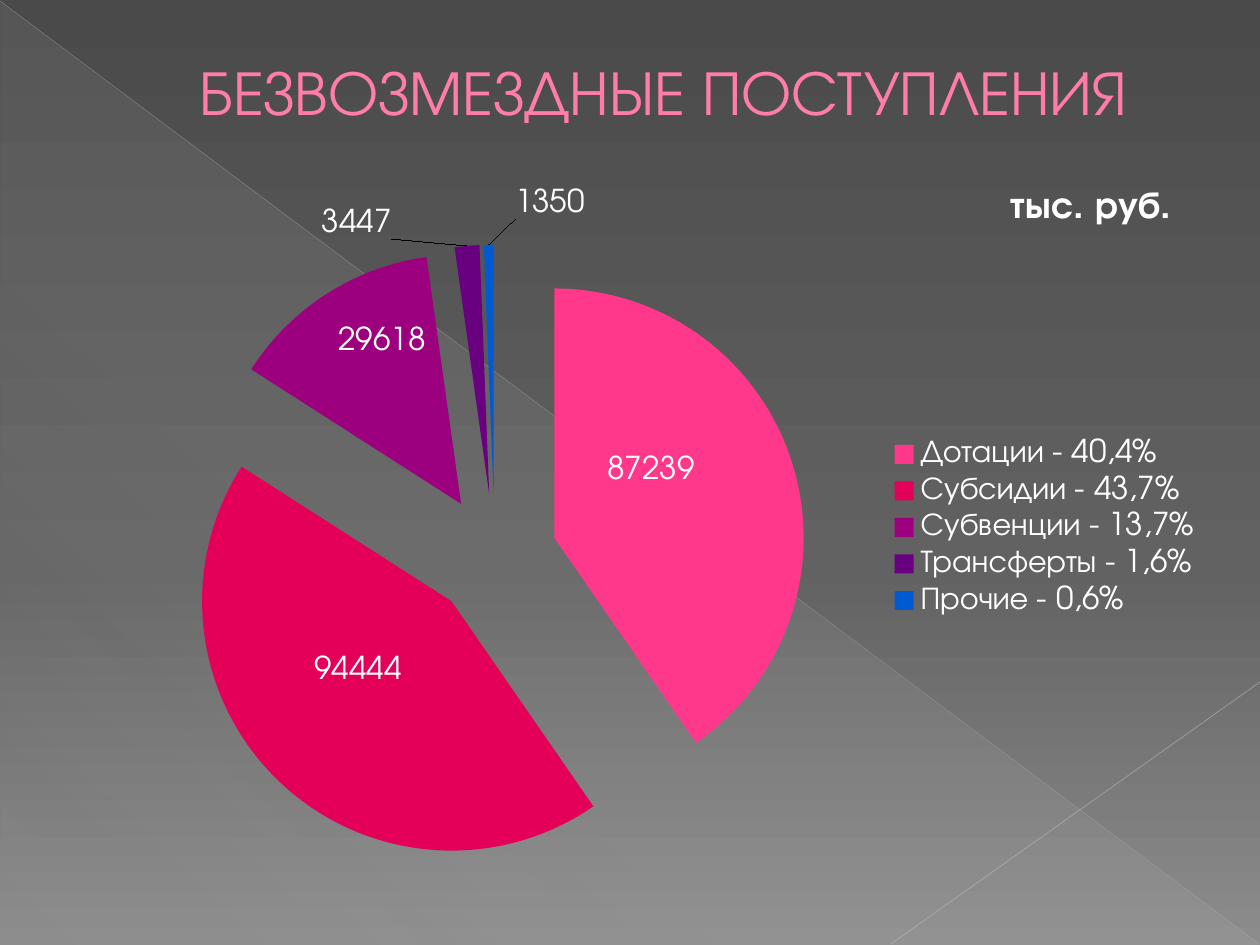
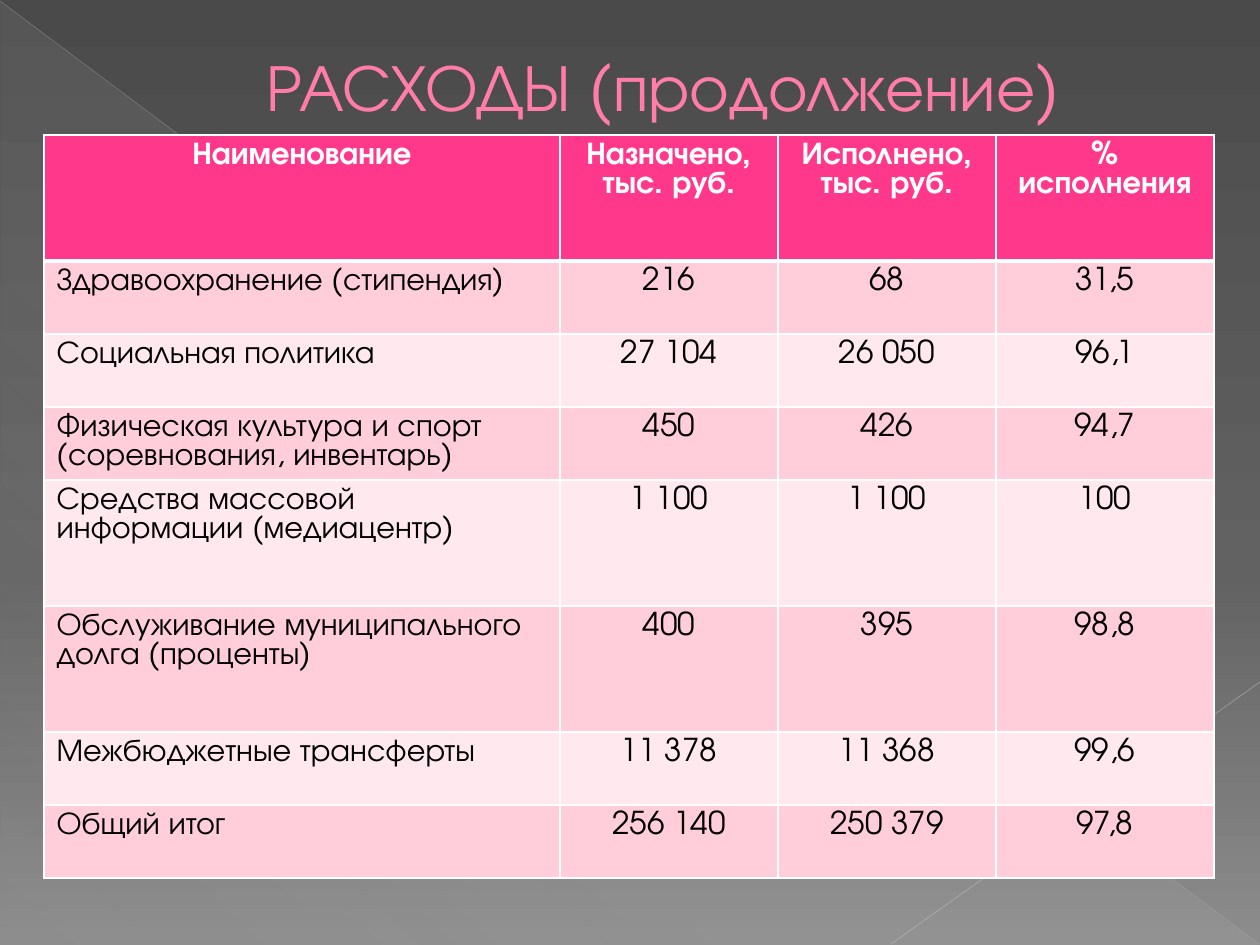
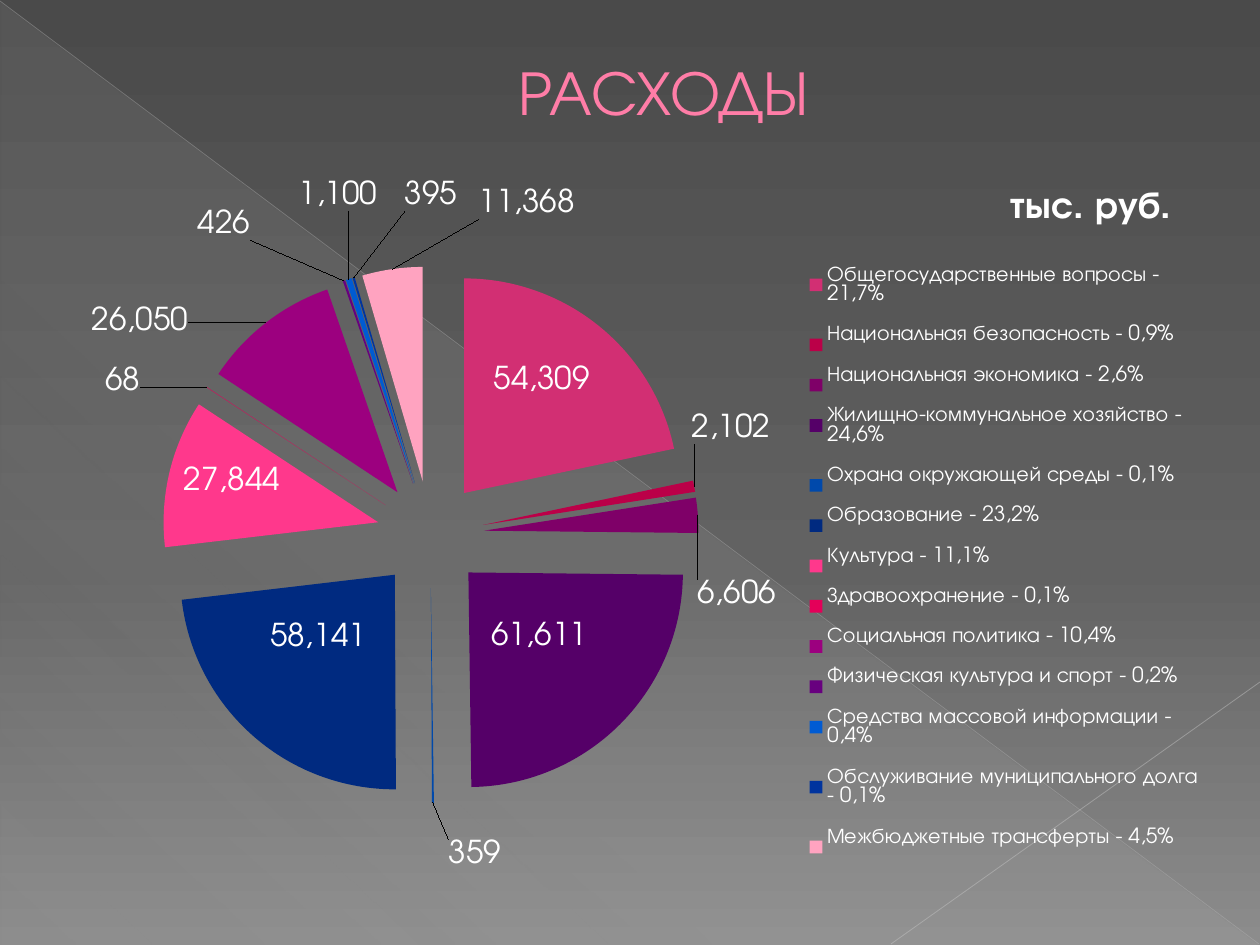
from math import cos, pi, sin

from lxml import etree
from pptx import Presentation
from pptx.chart.data import CategoryChartData
from pptx.dml.color import RGBColor
from pptx.enum.chart import XL_CHART_TYPE, XL_LABEL_POSITION, XL_LEGEND_POSITION
from pptx.enum.shapes import MSO_CONNECTOR, MSO_SHAPE
from pptx.enum.text import MSO_ANCHOR, MSO_AUTO_SIZE, PP_ALIGN
from pptx.oxml.ns import qn
from pptx.util import Emu, Pt

PIE = XL_CHART_TYPE.PIE
CENTER_LABEL = XL_LABEL_POSITION.CENTER
RIGHT_LEGEND = XL_LEGEND_POSITION.RIGHT
STRAIGHT = MSO_CONNECTOR.STRAIGHT
TRIANGLE = MSO_SHAPE.RIGHT_TRIANGLE
MIDDLE = MSO_ANCHOR.MIDDLE
NO_FIT = MSO_AUTO_SIZE.NONE
LEFT, CENTER = PP_ALIGN.LEFT, PP_ALIGN.CENTER

SCALE = 914400 / 126
FACE = "TeX Gyre Adventor"
WHITE, BLACK = "FFFFFF", "000000"
ROSE, RIM = "FF7DA7", "B12761"
HEAD = "FF388C"
BANDS = ("FFCEDA", "FFE8EE")
HUES = ["FF388C", "E40059", "9C007F", "68007F", "005BD3", "00349E"]
DARK = ["D22F73", "BB0048", "7F0068", "550068", "0049AB", "002A80"]
PALE = "FFA3C0"
EXPLODE = 25
DROP = 3  # digits sit this much above the middle of their label
FRAME = (44, 165, 1171, 725)
UNIT = "тыс. руб."

GRANTS = [  # name, value, centre of the label
    ("Дотации - 40,4%", 87239, (651, 468)),
    ("Субсидии - 43,7%", 94444, (358, 668)),
    ("Субвенции - 13,7%", 29618, (382, 339)),
    ("Трансферты - 1,6%", 3447, (357, 221)),
    ("Прочие - 0,6%", 1350, (550, 201)),
]
COSTS = [
    ("Общегосударственные вопросы - 21,7%", 54309, (542, 378)),
    ("Национальная безопасность - 0,9%", 2102, (731, 426)),
    ("Национальная экономика - 2,6%", 6606, (737, 592)),
    ("Жилищно-коммунальное хозяйство - 24,6%", 61611, (539, 634)),
    ("Охрана окружающей среды - 0,1%", 359, (475, 852)),
    ("Образование - 23,2%", 58141, (318, 635)),
    ("Культура - 11,1%", 27844, (232, 479)),
    ("Здравоохранение - 0,1%", 68, (123, 379)),
    ("Социальная политика - 10,4%", 26050, (140, 319)),
    ("Физическая культура и спорт - 0,2%", 426, (224, 222)),
    ("Средства массовой информации - 0,4%", 1100, (338, 193)),
    ("Обслуживание муниципального долга - 0,1%", 395, (431, 193)),
    ("Межбюджетные трансферты - 4,5%", 11368, (527, 201)),
]
ROWS = [
    ("Наименование", "Назначено, тыс. руб.", "Исполнено, тыс. руб.", "% исполнения"),
    ("Здравоохранение (стипендия)", "216", "68", "31,5"),
    ("Социальная политика", "27 104", "26 050", "96,1"),
    ("Физическая культура и спорт (соревнования, инвентарь)", "450", "426", "94,7"),
    ("Средства массовой информации (медиацентр)", "1 100", "1 100", "100"),
    ("Обслуживание муниципального долга (проценты)", "400", "395", "98,8"),
    ("Межбюджетные трансферты", "11 378", "11 368", "99,6"),
    ("Общий итог", "256 140", "250 379", "97,8"),
]
WIDTHS = (516, 218, 218, 218)
HEIGHTS = (126, 73, 73, 73, 126, 126, 73, 73)


def px(n):
    return Emu(round(n * SCALE))


def box(*sizes):
    return [px(n) for n in sizes]


def rgb(code):
    return RGBColor.from_string(code)


def add(node, tag, **attrs):
    child = etree.SubElement(node, qn(tag))
    for key, val in attrs.items():
        child.set(key, str(val))
    return child


def tint(node, code, alpha=100):
    color = add(node, "a:srgbClr", val=code)
    if alpha < 100:
        add(color, "a:alpha", val=alpha * 1000)


def style(font, size, code, bold=False):
    font.name, font.size, font.bold = FACE, Pt(size), bold
    font.color.rgb = rgb(code)


def shade(fill, node, angle, stops):
    """Gradient of (position, colour, opacity) stops, angle clockwise."""
    fill.gradient()
    grad = node.find(".//" + qn("a:gradFill"))
    grad.find(qn("a:lin")).set("ang", str(angle * 60000))
    steps = grad.find(qn("a:gsLst"))
    for old in list(steps):
        steps.remove(old)
    for pos, code, alpha in stops:
        tint(add(steps, "a:gs", pos=pos * 1000), code, alpha)


def add_line(slide, ends, code, width, alpha):
    line = slide.shapes.add_connector(STRAIGHT, *box(*ends))
    line.line.width = Pt(width)
    line.line.color.rgb = rgb(code)
    props = line._element.spPr
    add(props.find(".//" + qn("a:srgbClr")), "a:alpha", val=alpha * 1000)
    add(props, "a:effectLst")
    return line


def dress(master, slide):
    """Give the master its background; its shapes are drawn on slide, then moved."""
    back = master.background.fill
    shade(back, master._element, 90,
          [(0, "4A4A4A", 100), (60, "626262", 100), (100, "8C8C8C", 100)])
    wedge = slide.shapes.add_shape(TRIANGLE, *box(1, 2, 1258, 943))
    wedge.shadow.inherit = False
    wedge.line.fill.background()
    shade(wedge.fill, wedge._element, 133,
          [(0, "D2D2D2", 10), (70, "D2D2D2", 8), (100, "D2D2D2", 1)])
    decor = [wedge,
             add_line(slide, (0, 1, 1259, 944), "BFBFBF", 0.39, 35),
             add_line(slide, (1260, 682, 891, 944), "C6C6C6", 0.47, 45)]
    for n, shape in enumerate(decor):
        node = shape._element
        node.find(".//" + qn("p:cNvPr")).set("id", str(100 + n))
        master.shapes._spTree.insert(2 + n, node)


def set_title(slide, text, height=108, size=36):
    title = slide.shapes.title
    title.left, title.top, title.width, title.height = box(63, 36, 1134, height)
    frame = title.text_frame
    frame.text = text
    frame.auto_size = NO_FIT
    frame.vertical_anchor = MIDDLE
    para = frame.paragraphs[0]
    para.alignment = CENTER
    style(para.font, size, ROSE)
    props = para._p.get_or_add_pPr()
    props.set("marL", str(px(67)))
    props.set("indent", "0")
    rim = add(props.find(qn("a:defRPr")), "a:ln", w=Pt(0.5))
    tint(add(rim, "a:solidFill"), RIM)
    rim.getparent().insert(0, rim)


def place(node, index, inner=False, edge=True, **sizes):
    """Manual layout in shares of the chart; edge=False means an offset."""
    for old in node.findall(qn("c:layout")):
        node.remove(old)
    layout = add(node, "c:layout")
    node.insert(index, layout)
    manual = add(layout, "c:manualLayout")
    if inner:
        add(manual, "c:layoutTarget", val="inner")
    if edge:
        add(manual, "c:xMode", val="edge")
        add(manual, "c:yMode", val="edge")
    for key, val in sizes.items():
        add(manual, "c:" + key, val=round(val, 4))


def set_labels(series, data, plot, form):
    """Move each value from the middle of its slice to its own spot."""
    labels = series.data_labels
    labels.show_value = True
    labels.position = CENTER_LABEL
    labels.number_format, labels.number_format_is_linked = form, False
    style(labels.font, 18, WHITE)
    left, top, wide, high = FRAME
    midx = left + (plot["x"] + plot["w"] / 2) * wide
    midy = top + (plot["y"] + plot["h"] / 2) * high
    burst = EXPLODE / 100
    reach = min(plot["w"] * wide, plot["h"] * high) / 2 / (1 + burst) * (0.5 + burst)
    total = sum(val for _, val, _ in data)
    done = 0
    for n, (_, val, (x, y)) in enumerate(data):
        turn = 2 * pi * (done + val / 2) / total
        done += val
        series.points[n].data_label.position = CENTER_LABEL
        spot = series._element.findall(".//" + qn("c:dLbl"))[n]
        place(spot, 1, edge=False,
              x=(x - midx - reach * sin(turn)) / wide,
              y=(y + DROP - midy + reach * cos(turn)) / high)


def add_pie(slide, data, hues, plot, form="General", key_size=18, key=None):
    source = CategoryChartData(number_format=form)
    source.categories = [name for name, _, _ in data]
    source.add_series("Series 1", [val for _, val, _ in data])
    chart = slide.shapes.add_chart(PIE, *box(*FRAME), source).chart
    style(chart.font, 18, WHITE)

    chart.has_title = True
    head = chart.chart_title
    head.text_frame.text = UNIT
    style(head.text_frame.paragraphs[0].font, 21.6, WHITE, True)
    place(head._element, 1, x=0.82, y=0.02)

    chart.has_legend = True
    legend = chart.legend
    legend.position = RIGHT_LEGEND
    legend.include_in_layout = False
    style(legend.font, key_size, WHITE)
    if key:
        place(legend._element, 1, **key)

    place(chart._chartSpace.find(".//" + qn("c:plotArea")), 0, inner=True, **plot)
    pie = chart.plots[0]
    pie.vary_by_categories = True
    series = pie.series[0]
    for n, code in enumerate(hues):
        fill = series.points[n].format.fill
        fill.solid()
        fill.fore_color.rgb = rgb(code)
    node = series._element
    burst = add(node, "c:explosion", val=EXPLODE)
    node.find(qn("c:dPt")).addprevious(burst)
    set_labels(series, data, plot, form)


def set_cell(cell, text, align, fill, code, bold, top, bottom):
    cell.text = text
    cell.fill.solid()
    cell.fill.fore_color.rgb = rgb(fill)
    para = cell.text_frame.paragraphs[0]
    para.alignment = align
    style(para.font, 18, code, bold)
    props = cell._tc.get_or_add_tcPr()
    for n, (side, width) in enumerate(zip("LRTB", (1, 1, top, bottom))):
        edge = add(props, "a:ln" + side, w=Pt(width))
        tint(add(edge, "a:solidFill"), WHITE)
        props.insert(n, edge)


def add_grid(slide):
    size = box(44, 135, sum(WIDTHS), sum(HEIGHTS))
    grid = slide.shapes.add_table(len(ROWS), len(WIDTHS), *size).table
    grid.first_row = grid.horz_banding = False
    for col, width in zip(grid.columns, WIDTHS):
        col.width = px(width)
    for r, (row, height) in enumerate(zip(ROWS, HEIGHTS)):
        grid.rows[r].height = px(height)
        head = r == 0
        fill = HEAD if head else BANDS[(r - 1) % 2]
        for c, text in enumerate(row):
            set_cell(grid.cell(r, c), text, CENTER if head or c else LEFT, fill,
                     WHITE if head else BLACK, head,
                     3 if r == 1 else 1, 3 if head else 1)


def main():
    deck = Presentation()
    deck.slide_width, deck.slide_height = box(1260, 945)
    income, table, costs = [deck.slides.add_slide(deck.slide_layouts[5])
                            for _ in range(3)]
    dress(deck.slide_master, income)

    set_title(income, "БЕЗВОЗМЕЗДНЫЕ ПОСТУПЛЕНИЯ")
    add_pie(income, GRANTS, HUES[:5], dict(x=0.01, y=0.11, w=0.75, h=0.86))

    set_title(table, "РАСХОДЫ (продолжение)", 98, 37.8)
    add_grid(table)

    set_title(costs, "РАСХОДЫ")
    add_pie(costs, COSTS, DARK + HUES + [PALE],
            dict(x=0.01, y=0.14, w=0.64, h=0.74), "#,##0", 12,
            dict(x=0.65, y=0.11, w=0.34, h=0.86))

    deck.save("out.pptx")


if __name__ == "__main__":
    main()
